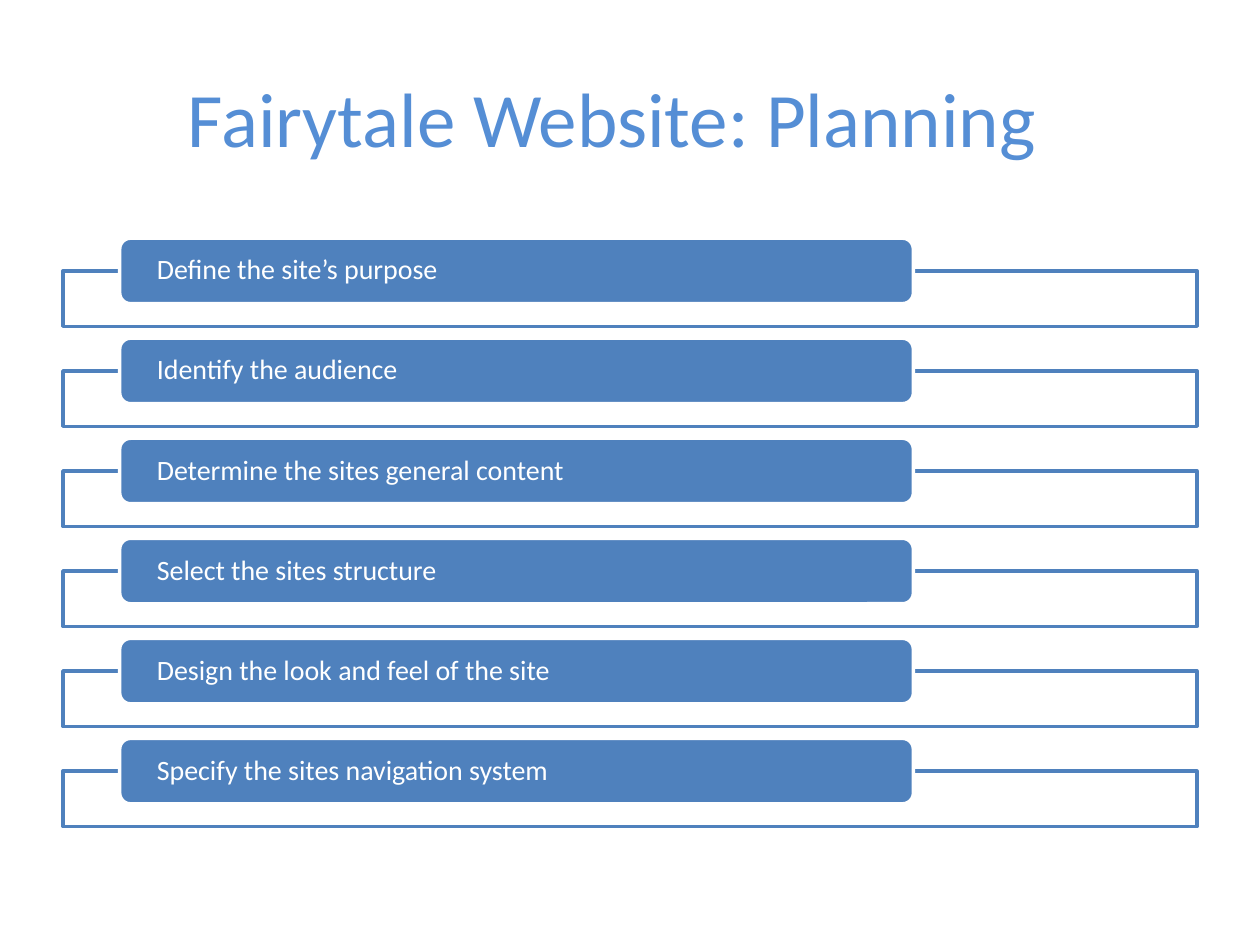
from lxml.etree import SubElement
from pptx import Presentation
from pptx.dml.color import RGBColor
from pptx.enum.shapes import MSO_SHAPE as Shape
from pptx.enum.text import MSO_ANCHOR as Anchor, PP_ALIGN as Align
from pptx.oxml.ns import qn
from pptx.util import Inches, Pt

STEPS = [
    "Define the site’s purpose",
    "Identify the audience",
    "Determine the sites general content",
    "Select the sites structure",
    "Design the look and feel of the site",
    "Specify the sites navigation system",
]
FIRST_TOP = 1.89
STEP_PITCH = 0.794
FRAME_DROP = 0.26


def color(value):
    return RGBColor.from_string(value)


def apply(target, values):
    for name, value in values.items():
        setattr(target, name, value)


class PlanningSlide:
    font = "Calibri"
    blue = "4F81BD"
    title_blue = "558ED5"
    white = "FFFFFF"

    def __init__(self, presentation):
        self.slide = presentation.slides.add_slide(presentation.slide_layouts[5])

    def set_text(self, shape, text, size, text_color, frame_format, paragraph_format):
        frame = shape.text_frame
        frame.text = text
        apply(frame, {"word_wrap": True, "vertical_anchor": Anchor.MIDDLE, **frame_format})
        paragraph = frame.paragraphs[0]
        apply(paragraph, paragraph_format)
        font = paragraph.runs[0].font
        apply(font, {"name": self.font, "size": Pt(size)})
        font.color.rgb = color(text_color)

    def title(self, text, left, top, width, height):
        shape = self.slide.shapes.title
        apply(shape, {"left": Inches(left), "top": Inches(top),
                      "width": Inches(width), "height": Inches(height)})
        self.set_text(shape, text, 44, self.title_blue,
                      {"margin_right": Inches(0.38)}, {"alignment": Align.CENTER})

    def box(self, kind, left, top, width, height, fill, line):
        shape = self.slide.shapes.add_shape(
            kind, Inches(left), Inches(top), Inches(width), Inches(height))
        shape.shadow.inherit = False
        shape.fill.solid()
        shape.fill.fore_color.rgb = color(fill)
        shape.line.color.rgb = color(line)
        shape.line.width = Pt(2)
        return shape

    def frame(self, left, top, width, height):
        shape = self.box(Shape.RECTANGLE, left, top, width, height, self.white, self.blue)
        fill_color = shape.element.spPr.find(qn("a:solidFill")).find(qn("a:srgbClr"))
        SubElement(fill_color, qn("a:alpha"), val="90000")

    def label(self, text, left, top, width, height):
        shape = self.box(Shape.ROUNDED_RECTANGLE, left, top, width, height,
                         self.blue, self.white)
        self.set_text(shape, text, 16, self.white,
                      {"margin_left": Inches(0.27), "margin_right": Inches(0.27),
                       "margin_top": 0, "margin_bottom": 0},
                      {"alignment": Align.LEFT, "line_spacing": 0.9})

    def step(self, text, top):
        self.frame(0.5, top + FRAME_DROP, 9, 0.44)
        self.label(text, 0.95, top, 6.3, 0.52)


def main():
    presentation = Presentation()
    apply(presentation, {"slide_width": Inches(10), "slide_height": Inches(7.5)})
    planning = PlanningSlide(presentation)
    planning.title("Fairytale Website: Planning", 0.5, 0.3, 9, 1.25)
    for index, text in enumerate(STEPS):
        planning.step(text, FIRST_TOP + index * STEP_PITCH)
    presentation.save("out.pptx")


if __name__ == "__main__":
    main()
